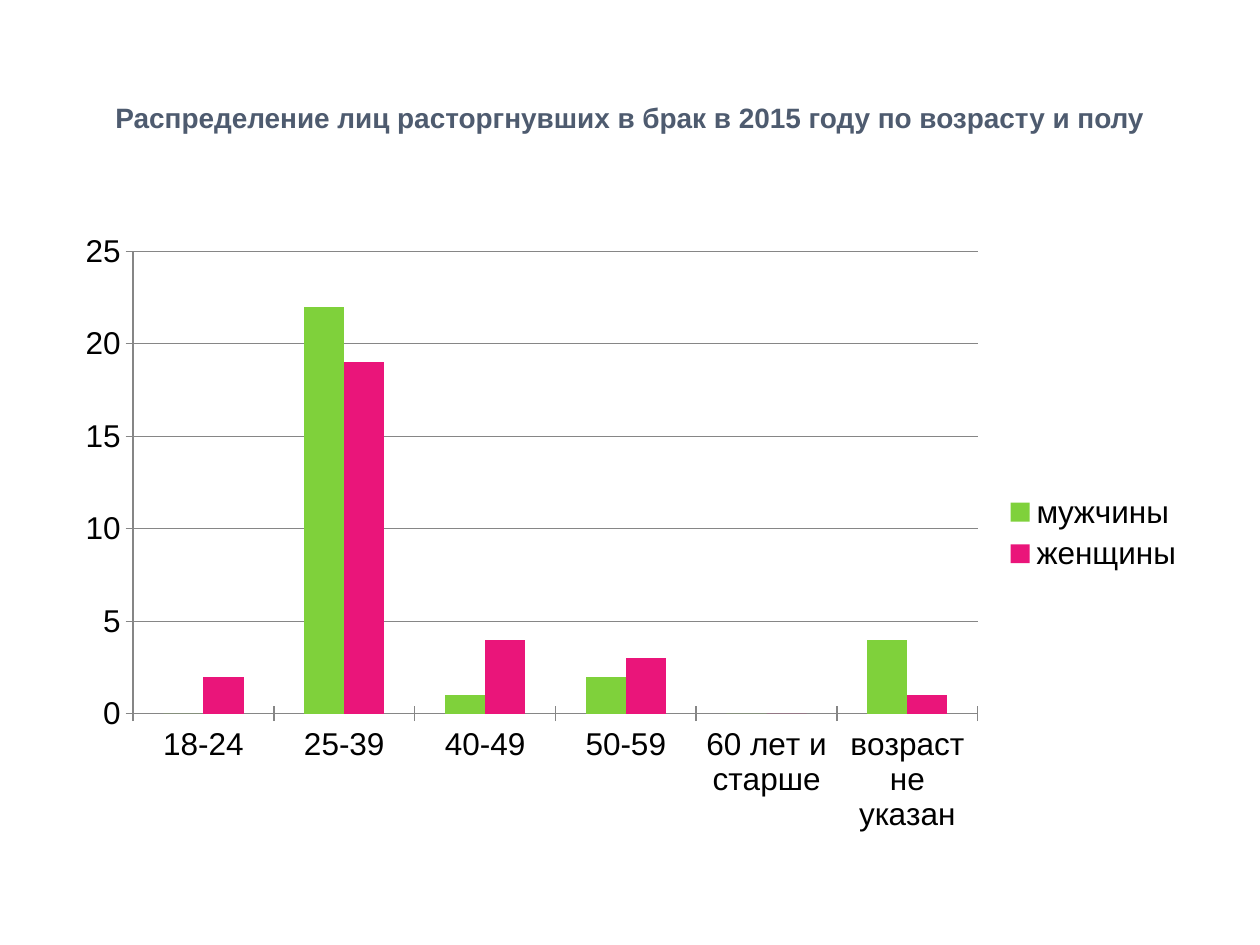
from dataclasses import dataclass

from pptx import Presentation
from pptx.chart.data import CategoryChartData
from pptx.dml.color import RGBColor
from pptx.enum.chart import XL_CHART_TYPE as ChartType
from pptx.enum.chart import XL_LEGEND_POSITION as LegendPosition
from pptx.enum.chart import XL_TICK_MARK as TickMark
from pptx.enum.text import MSO_ANCHOR as Anchor
from pptx.enum.text import PP_ALIGN as Align
from pptx.util import Emu, Inches, Pt

PX_PER_INCH = 126


@dataclass(frozen=True)
class Theme:
    font: str = "Arial"
    heading_size: int = 16
    chart_size: int = 18
    heading: str = "4E5B6F"
    text: str = "000000"
    rule: str = "868686"
    men: str = "7FD13B"
    women: str = "EA157A"


THEME = Theme()

HEADING = "Распределение лиц расторгнувших в брак в 2015 году по возрасту и полу"
AGE_GROUPS = ["18-24", "25-39", "40-49", "50-59", "60 лет и старше", "возраст не указан"]
DIVORCES = [
    ("мужчины", (0, 22, 1, 2, 0, 4), THEME.men),
    ("женщины", (2, 19, 4, 3, 0, 1), THEME.women),
]


def px(length):
    return Emu(round(length * Inches(1) / PX_PER_INCH))


def rgb(value):
    return RGBColor.from_string(value)


def style_font(font, size, color, bold=False):
    font.name = THEME.font
    font.size = Pt(size)
    font.bold = bold
    font.color.rgb = rgb(color)


def style_line(line):
    line.color.rgb = rgb(THEME.rule)
    line.width = Pt(0.75)


def add_heading(slide, left, top, width, height):
    heading = slide.shapes.title
    heading.left, heading.top = px(left), px(top)
    heading.width, heading.height = px(width), px(height)
    frame = heading.text_frame
    frame.text = HEADING
    frame.word_wrap = True
    frame.vertical_anchor = Anchor.MIDDLE
    paragraph = frame.paragraphs[0]
    paragraph.alignment = Align.CENTER
    style_font(paragraph.font, THEME.heading_size, THEME.heading, bold=True)


def add_divorce_chart(slide, left, top, width, height):
    data = CategoryChartData()
    data.categories = AGE_GROUPS
    for sex, counts, _ in DIVORCES:
        data.add_series(sex, counts)
    chart = slide.shapes.add_chart(
        ChartType.COLUMN_CLUSTERED, px(left), px(top), px(width), px(height), data
    ).chart
    chart.has_title = False
    style_font(chart.font, THEME.chart_size, THEME.text)

    # Columns
    columns = chart.plots[0]
    columns.gap_width = 150
    columns.overlap = 0
    columns.vary_by_categories = False
    for series, (_, _, color) in zip(columns.series, DIVORCES):
        series.format.fill.solid()
        series.format.fill.fore_color.rgb = rgb(color)

    # Axes and gridlines
    for axis in (chart.category_axis, chart.value_axis):
        axis.major_tick_mark = TickMark.CROSS
        axis.minor_tick_mark = TickMark.NONE
        style_line(axis.format.line)
    counts_axis = chart.value_axis
    counts_axis.minimum_scale, counts_axis.maximum_scale = 0, 25
    counts_axis.major_unit = 5
    counts_axis.has_major_gridlines = True
    style_line(counts_axis.major_gridlines.format.line)

    # Legend
    chart.has_legend = True
    chart.legend.position = LegendPosition.RIGHT
    chart.legend.include_in_layout = False


def main():
    deck = Presentation()
    deck.slide_width, deck.slide_height = px(1260), px(945)
    slide = deck.slides.add_slide(deck.slide_layouts.get_by_name("Title Only"))
    add_heading(slide, 63, 38, 1134, 158)
    add_divorce_chart(slide, 63, 221, 1134, 624)
    deck.save("out.pptx")


if __name__ == "__main__":
    main()
